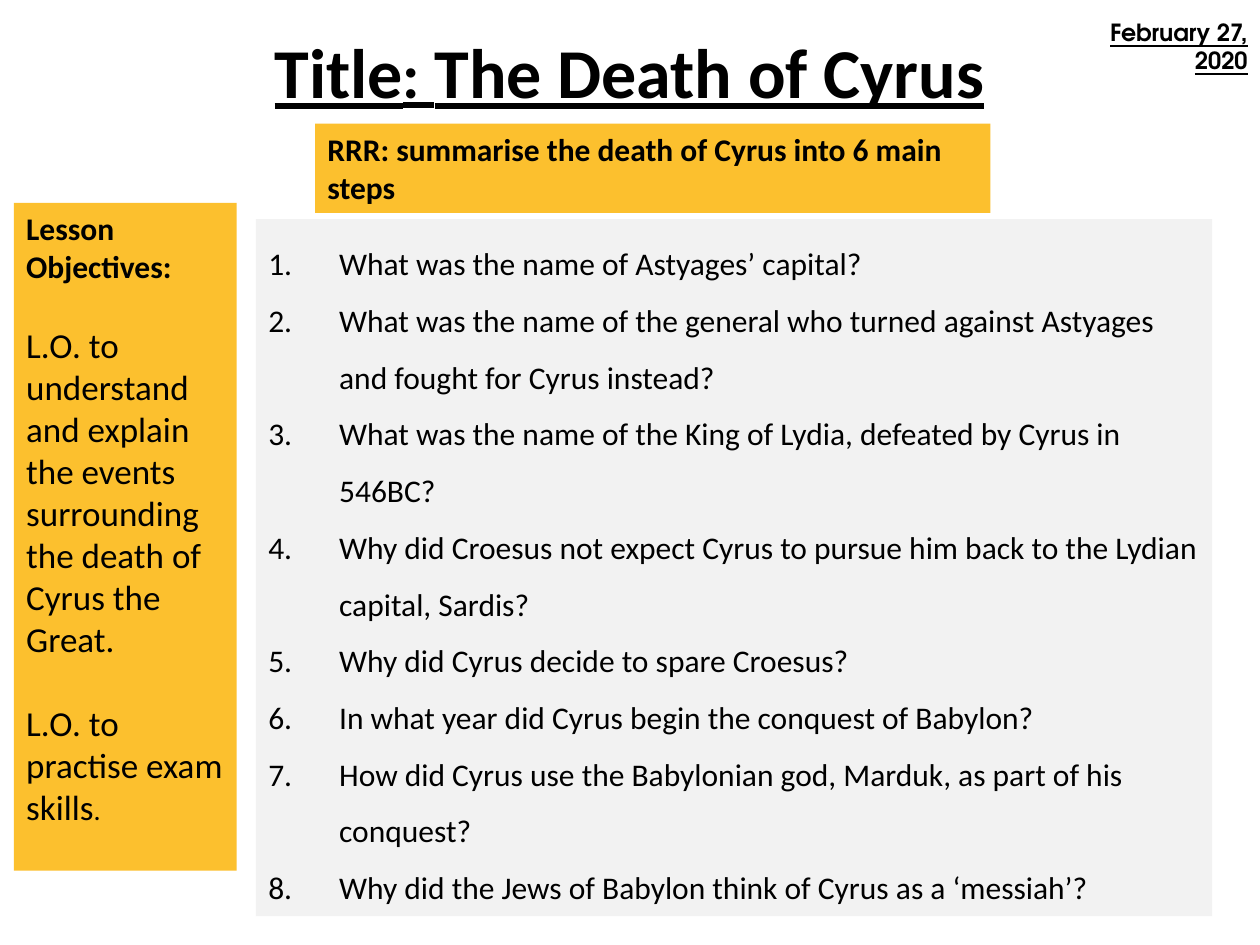
"""Build the lesson slide on the death of Cyrus."""
import dataclasses

import pptx
import pptx.dml.color
import pptx.enum.shapes
import pptx.enum.text
import pptx.oxml
import pptx.oxml.ns
import pptx.util

Pt = pptx.util.Pt
ALIGN = pptx.enum.text.PP_ALIGN


@dataclasses.dataclass(frozen=True)
class Theme:
    font: str = "Calibri"
    date_font: str = "TeX Gyre Adventor"
    ink: str = "000000"
    gold: str = "FCC02E"
    grey: str = "F2F2F2"
    title: float = 40
    colon: float = 36
    objective: float = 20
    body: float = 18
    stop: float = 16
    date: float = 13.5


class Builder:
    def __init__(self, slide, theme):
        self.s = slide
        self.theme = theme

    def text(self, x, y, w, h):
        sp = self.s.shapes.add_textbox(Pt(x), Pt(y), Pt(w), Pt(h))
        return self.frame(sp)

    def panel(self, x, y, w, h, color):
        kind = pptx.enum.shapes.MSO_SHAPE.RECTANGLE
        sp = self.s.shapes.add_shape(kind, Pt(x), Pt(y), Pt(w), Pt(h))
        sp.shadow.inherit = False
        sp.fill.solid()
        sp.fill.fore_color.rgb = pptx.dml.color.RGBColor.from_string(color)
        sp.line.fill.background()
        return self.frame(sp)

    def frame(self, sp):
        tf = sp.text_frame
        tf.word_wrap = True
        tf.vertical_anchor = pptx.enum.text.MSO_ANCHOR.TOP
        return tf

    def paragraph(self, tf, align=ALIGN.LEFT, before=0):
        p = tf.paragraphs[0]
        if p.runs:
            p = tf.add_paragraph()
        p.alignment = align
        p.space_before = Pt(before)
        return p

    def run(self, p, text, size, bold=False, underline=False, font=None):
        r = p.add_run()
        r.text = text
        r.font.name = font or self.theme.font
        r.font.size = Pt(size)
        r.font.bold = bold
        r.font.underline = underline
        r.font.color.rgb = pptx.dml.color.RGBColor.from_string(self.theme.ink)

    def numbered(self, tf, items, size, indent):
        for item in items:
            p = self.paragraph(tf)
            p.line_spacing = 1.5
            ppr = p._p.get_or_add_pPr()
            ppr.set("marL", str(Pt(indent)))
            ppr.set("indent", str(-Pt(indent)))
            number = pptx.oxml.parse_xml(
                f'<a:buAutoNum {pptx.oxml.ns.nsdecls("a")} type="arabicPeriod"/>')
            ppr.append(number)
            self.run(p, item, size)


QUESTIONS = [
    "What was the name of Astyages’ capital?",
    "What was the name of the general who turned against Astyages and fought for Cyrus instead?",
    "What was the name of the King of Lydia, defeated by Cyrus in 546BC?",
    "Why did Croesus not expect Cyrus to pursue him back to the Lydian capital, Sardis?",
    "Why did Cyrus decide to spare Croesus?",
    "In what year did Cyrus begin the conquest of Babylon?",
    "How did Cyrus use the Babylonian god, Marduk, as part of his conquest?",
    "Why did the Jews of Babylon think of Cyrus as a ‘messiah’?",
]


def main():
    prs = pptx.Presentation()
    prs.slide_width, prs.slide_height = Pt(720), Pt(540)
    theme = Theme()
    b = Builder(prs.slides.add_slide(prs.slide_layouts[6]), theme)

    objectives = b.panel(7.9, 116, 127.4, 381.6, theme.gold)
    b.run(b.paragraph(objectives), "Lesson Objectives:", theme.body, bold=True)
    p = b.paragraph(objectives, before=22)
    b.run(p, "L.O. to understand and explain the events surrounding "
             "the death of Cyrus the Great.", theme.objective)
    p = b.paragraph(objectives, before=24)
    b.run(p, "L.O. to practise exam skills", theme.objective)
    b.run(p, ".", theme.stop)

    p = b.paragraph(b.text(99.4, 13, 520.6, 55.4), ALIGN.CENTER)
    for text, size in (("Title", theme.title), (": ", theme.colon),
                       ("The Death of Cyrus", theme.title)):
        b.run(p, text, size, bold=True, underline=True)

    p = b.paragraph(b.text(596.2, 6.5, 123.8, 40.3), ALIGN.RIGHT)
    b.run(p, "February 27, 2020", theme.date, True, True, theme.date_font)

    p = b.paragraph(b.panel(180, 70.6, 386, 51, theme.gold))
    b.run(p, "RRR: summarise the death of Cyrus into 6 main steps", theme.body, bold=True)

    questions = b.panel(146.2, 125.3, 546.5, 398.2, theme.grey)
    b.numbered(questions, QUESTIONS, theme.body, 40.5)

    prs.save("out.pptx")


if __name__ == "__main__":
    main()
